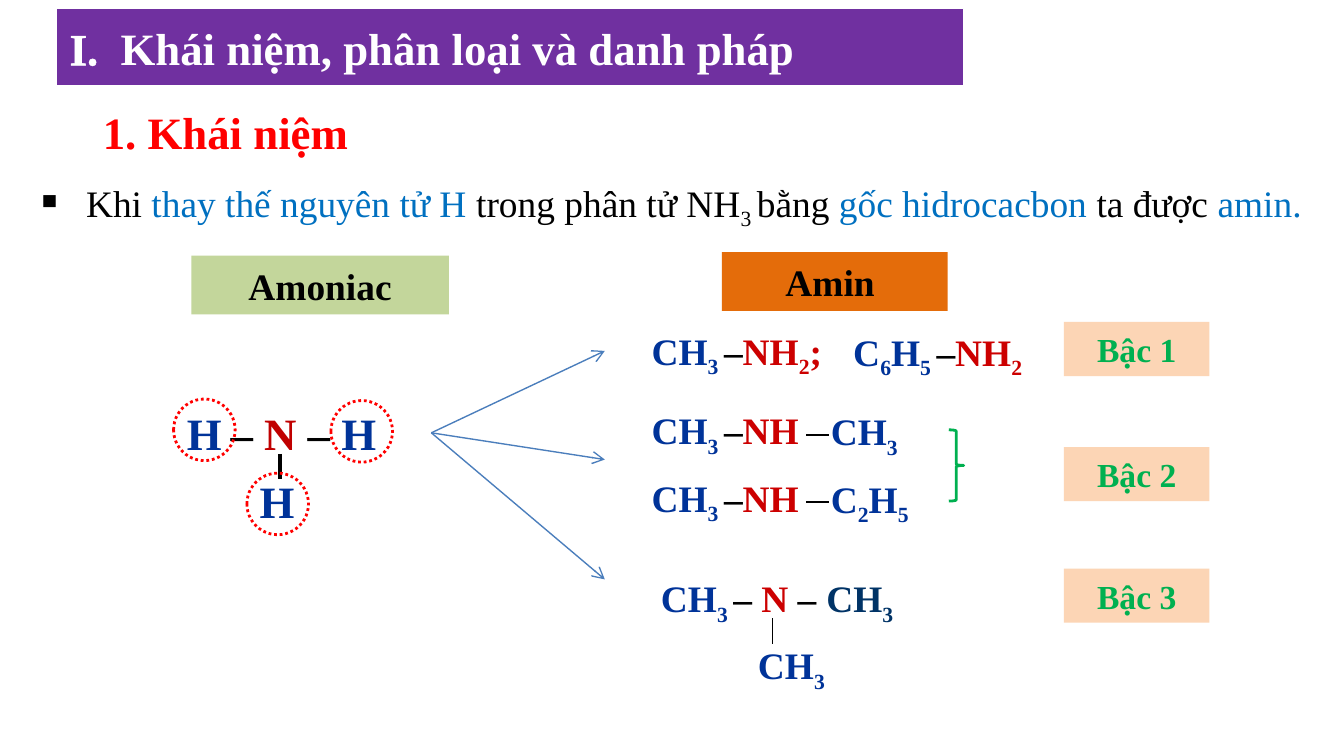
from pptx import Presentation
from pptx.dml.color import RGBColor as RGB
from pptx.enum.dml import MSO_LINE as DASH
from pptx.enum.shapes import MSO_SHAPE as SHAPE, MSO_CONNECTOR as LINK
from pptx.enum.text import PP_ALIGN as ALIGN, MSO_ANCHOR as ANCHOR
from pptx.oxml.ns import qn
from pptx.util import Pt
from lxml.etree import SubElement as Sub

THEME = {
    "font": "Times New Roman",
    "head": 24, "body": 20, "tag": 18,
    "white": "FFFFFF", "black": "000000", "purple": "7030A0", "red": "FF0000",
    "sky": "0070C0", "navy": "003399", "teal": "003366", "rose": "CC0000",
    "wine": "C00000", "lime": "C3D69B", "orange": "E46C0A", "peach": "FCD5B5",
    "green": "00B050", "steel": "4B7EBC",
}

TITLE = [("I.  ", "white"), ("Khái niệm, phân loại và danh pháp", "white")]
TOPIC = [("1. Khái niệm", "red")]
RULE = [
    ("Khi ", "black"), ("thay thế nguyên tử H ", "sky"),
    ("trong phân tử NH_3 _bằng ", "black"), ("gốc hidrocacbon ", "sky"),
    ("ta được ", "black"), ("amin.", "sky"),
]
HEADS = [
    ("Amoniac", "lime", (102.5, 137, 138, 31.5)),
    ("Amin ", "orange", (386.7, 135, 121, 31.5)),
]
TAGS = [("Bậc 1", 172.5), ("Bậc 2", 239.5), ("Bậc 3", 304.6)]

METHYL = [("CH_3 _", "navy"), ("–", "black")]
AMINES = [
    (METHYL + [("NH_2_;", "rose")], 342, 172.3, 156),
    ([("C_6_H_5 _", "navy"), ("–", "black"), ("NH_2", "rose")], 450, 172.8, 120),
    ([("CH_3 _", "navy"), ("– ", "black"), ("N", "rose"), (" –", "black")], 347, 304.8, 132),
    ([("CH_3", "teal")], 435.6, 304.8, 80),
    ([("CH_3", "navy")], 399, 340.6, 81),
]
PAIRS = [("CH_3", 214.8), ("C_2_H_5", 250.8)]
ATOMS = [(93, 214), (132, 250)]
BONDS = [("– ", "black"), ("N", "wine"), (" – ", "black"), ("H", "navy")]
RINGS = [(93, 213.8), (132.3, 253.5), (177.3, 214.6)]
FORK = (231.1, 231.9)
TIPS = [188, 246.2, 310.4]

deck = Presentation()
deck.slide_width, deck.slide_height = Pt(720), Pt(405)
slide = deck.slides.add_slide(deck.slide_layouts[6])
shapes = slide.shapes


def tint(name):
    return RGB.from_string(THEME[name])


def put(item, **form):
    for key, val in form.items():
        setattr(item, key, val)


def write(shape, runs, size, bold=True, align=None):
    frame = shape.text_frame
    frame.word_wrap = True
    para = frame.paragraphs[0]
    para.alignment = align
    for text, ink in runs:
        for i, part in enumerate(text.split("_")):
            if part:
                run = para.add_run()
                run.text = part
                put(run.font, name=THEME["font"], size=Pt(THEME[size]), bold=bold)
                run.font.color.rgb = tint(ink)
                if i % 2:
                    run.font._element.set("baseline", "-25000")
    return para


def label(runs, x, y, w, h=31.5, size="body", bold=True):
    box = shapes.add_textbox(Pt(x), Pt(y), Pt(w), Pt(h))
    return write(box, runs, size, bold)


def form(kind, area, fill=None, line=None, width=0.75):
    shape = shapes.add_shape(kind, *map(Pt, area))
    shape.shadow.inherit = False
    if fill:
        shape.fill.solid()
        shape.fill.fore_color.rgb = tint(fill)
    else:
        shape.fill.background()
    if line:
        put(shape.line, width=Pt(width))
        shape.line.color.rgb = tint(line)
    else:
        shape.line.fill.background()
    return shape


def stroke(start, end, ink="black", width=1.0, head=False):
    link = shapes.add_connector(LINK.STRAIGHT, *map(Pt, start + end))
    put(link.line, width=Pt(width))
    link.line.color.rgb = tint(ink)
    Sub(link._element.spPr, qn("a:effectLst"))
    if head:
        Sub(link.line._get_or_add_ln(), qn("a:tailEnd"), type="arrow")


def build():
    """Build the amine definition slide."""
    band = form(SHAPE.RECTANGLE, (30.2, 4.7, 486, 41.5), "purple", "white")
    band.text_frame.vertical_anchor = ANCHOR.MIDDLE
    para = write(band, TITLE, "head", align=ALIGN.JUSTIFY)
    props = para.runs[0].font._element
    edge = Sub(props, qn("a:ln"), w=str(Pt(1.45)))
    Sub(Sub(edge, qn("a:solidFill")), qn("a:srgbClr"), val=THEME["white"])
    props.insert(0, edge)

    label(TOPIC, 48, 52.6, 192, 36, "head")
    para = label(RULE, 12, 93, 696, bold=False)
    props = para._p.get_or_add_pPr()
    props.set("marL", str(Pt(27)))
    props.set("indent", str(Pt(-27)))
    Sub(props, qn("a:buChar"), char="▪")

    for text, fill, area in HEADS:
        write(form(SHAPE.RECTANGLE, area, fill), [(text, "black")], "body", align=ALIGN.CENTER)
    for text, y in TAGS:
        tag = form(SHAPE.RECTANGLE, (570, y, 78, 29), "peach")
        write(tag, [(text, "green")], "tag", align=ALIGN.CENTER)

    label(BONDS, 116.5, 214, 114, 36.4, "head")
    for x, y in ATOMS:
        label([("H", "navy")], x, y, 36, 36.4, "head")
    stroke((150, 243.2), (150, 256.5), width=2.25)
    for x, y in RINGS:
        ring = form(SHAPE.OVAL, (x, y, 33, 33), line="red", width=1.5)
        ring.line.dash_style = DASH.ROUND_DOT

    for runs, x, y, w in AMINES:
        label(runs, x, y, w)
    stroke((413.9, 331.3), (413.9, 344.9), width=0.75)
    for tail, y in PAIRS:
        label(METHYL + [("NH", "rose")], 342, y, 146)
        label([(tail, "navy")], 438, y + 0.5, 78)
        stroke((432, y + 18.2), (444, y + 18.2))

    for y in TIPS:
        stroke(FORK, (324, y), "steel", 0.75, True)
    form(SHAPE.RIGHT_BRACE, (508.3, 230.3, 8, 38.2), line="green", width=1.5)
    deck.save("out.pptx")


if __name__ == "__main__":
    build()
